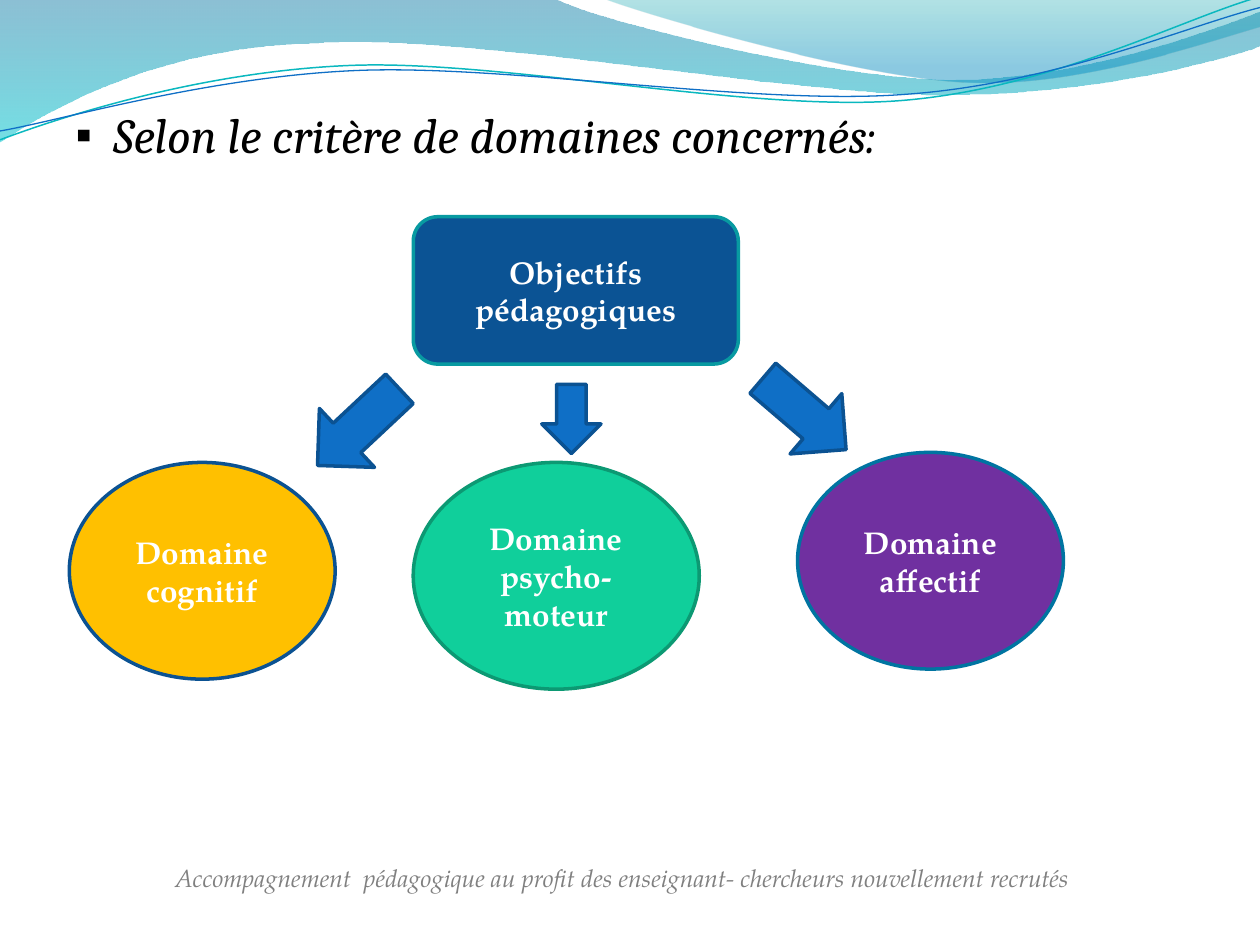
from dataclasses import dataclass
from math import cos, radians, sin
from typing import Optional

from lxml.etree import SubElement
from pptx import Presentation
from pptx.dml.color import RGBColor
from pptx.enum.shapes import MSO_SHAPE
from pptx.enum.text import MSO_ANCHOR, PP_ALIGN
from pptx.oxml.ns import qn
from pptx.util import Inches, Pt

BODY_FONT = "TeX Gyre Pagella"


@dataclass
class GradientStop:
    position: float
    color: str
    opacity: int


@dataclass
class Wave:
    start: tuple
    segments: list
    stops: tuple = ()
    line_color: str = ""
    line_width: float = 0
    rotation: float = 0
    center: tuple = (0, 0)


@dataclass
class Block:
    kind: MSO_SHAPE
    left: float
    top: float
    width: float
    height: float
    fill: str
    line: str
    text: Optional[str] = None
    rotation: float = 0


WAVES = [
    Wave(
        (0, 0),
        [(4.4, -0.01), (4.76, 0.17, 6.64, 0.63, 7.58, 0.63),
         (8.53, 0.63, 9.58, 0.26, 10, 0.09), (10.01, 0.36),
         (9.83, 0.44, 8.7, 0.76, 7.46, 0.75), (6.22, 0.75, 3.82, 0.28, 2.57, 0.34),
         (1.29, 0.36, 0.46, 0.83, -0.01, 1.13), (0, 0)],
        stops=(GradientStop(0, "0074A1", 45), GradientStop(1, "00C6CF", 55)),
    ),
    Wave(
        (4.79, -0.01),
        [(5.09, 0.11, 6.82, 0.62, 7.69, 0.65), (8.56, 0.69, 9.61, 0.32, 10, 0.21),
         (10, 0), (4.79, -0.01)],
        stops=(GradientStop(0, "00A1A9", 30), GradientStop(0.8, "008BBF", 45)),
    ),
    Wave(
        (0, 1.11),
        [(0.48, 0.93, 1.58, 0.57, 2.77, 0.52), (3.95, 0.47, 5.93, 0.89, 7.13, 0.8),
         (8.33, 0.71, 9.38, 0.15, 9.98, -0.02)],
        line_color="0AB8BF", line_width=0.85, rotation=357.3, center=(4.99, 0.57),
    ),
    Wave(
        (0, 1.04),
        [(0.47, 0.96, 1.64, 0.61, 2.83, 0.56), (4.03, 0.51, 5.97, 0.84, 7.17, 0.75),
         (8.36, 0.67, 9.41, 0.21, 10, 0.06)],
        line_color="0F6FC6", line_width=0.75, rotation=357.3, center=(5, 0.59),
    ),
]

BLOCKS = [
    Block(MSO_SHAPE.ROUNDED_RECTANGLE, 3.28, 1.72, 2.58, 1.17, "0B5394", "089AA1", "Objectifs pédagogiques"),
    Block(MSO_SHAPE.OVAL, 6.33, 3.59, 2.11, 1.72, "7030A0", "0074A1", "Domaine affectif"),
    Block(MSO_SHAPE.OVAL, 3.28, 3.67, 2.27, 1.8, "10CF9B", "0C9973", "Domaine psycho- moteur"),
    Block(MSO_SHAPE.OVAL, 0.55, 3.67, 2.11, 1.72, "FFC000", "0B5292", "Domaine cognitif"),
    Block(MSO_SHAPE.DOWN_ARROW, 4.3, 3.05, 0.47, 0.55, "0F6FC6", "0B5292"),
    Block(MSO_SHAPE.RIGHT_ARROW, 2.4, 3.07, 0.89, 0.64, "0F6FC6", "0B5292", rotation=136.9),
    Block(MSO_SHAPE.DOWN_ARROW, 6.07, 2.85, 0.63, 0.87, "0F6FC6", "0B5292", rotation=310.6),
]


def rgb(color: str) -> RGBColor:
    return RGBColor.from_string(color)


def write_text(paragraph, text: str, color: str, **formats) -> None:
    run = paragraph.add_run()
    run.text = text
    run.font.color.rgb = rgb(color)
    for name, value in formats.items():
        setattr(run.font, name, value)


def unrotate(wave: Wave, values: tuple) -> list:
    angle = radians(-wave.rotation)
    center_x, center_y = wave.center
    points = []
    for x, y in zip(values[::2], values[1::2]):
        dx, dy = x - center_x, y - center_y
        points.append((Inches(center_x + dx * cos(angle) - dy * sin(angle)),
                       Inches(center_y + dx * sin(angle) + dy * cos(angle))))
    return points


def curve_lines(shape, segments: list) -> None:
    left, top = shape.left, shape.top
    lines = list(shape._element.iter(qn("a:lnTo")))
    for line, points in zip(lines, segments):
        if len(points) == 1:
            continue
        line.tag = qn("a:cubicBezTo")
        line.remove(line[0])
        for x, y in points:
            SubElement(line, qn("a:pt"), x=str(x - left), y=str(y - top))


def fill_gradient(shape, stops: tuple) -> None:
    shape.fill.gradient()
    shape.fill.gradient_angle = 270
    for target, stop in zip(shape.fill.gradient_stops, stops):
        target.position = stop.position
        target.color.rgb = rgb(stop.color)
    for element, stop in zip(shape._element.spPr.iter(qn("a:srgbClr")), stops):
        SubElement(element, qn("a:alpha"), val=str(stop.opacity * 1000))


def draw_wave(slide, wave: Wave) -> None:
    segments = [unrotate(wave, segment) for segment in wave.segments]
    builder = slide.shapes.build_freeform(*unrotate(wave, wave.start)[0])
    builder.add_line_segments([points[-1] for points in segments], close=bool(wave.stops))
    shape = builder.convert_to_shape()
    curve_lines(shape, segments)
    shape.rotation = wave.rotation
    shape.shadow.inherit = False
    if wave.stops:
        fill_gradient(shape, wave.stops)
        shape.line.fill.background()
    else:
        shape.fill.background()
        shape.line.color.rgb = rgb(wave.line_color)
        shape.line.width = Pt(wave.line_width)


def draw_block(slide, block: Block) -> None:
    box = map(Inches, (block.left, block.top, block.width, block.height))
    shape = slide.shapes.add_shape(block.kind, *box)
    shape.shadow.inherit = False
    shape.rotation = block.rotation
    shape.fill.solid()
    shape.fill.fore_color.rgb = rgb(block.fill)
    shape.line.color.rgb = rgb(block.line)
    shape.line.width = Pt(2)
    if block.text:
        shape.text_frame.word_wrap = True
        shape.text_frame.vertical_anchor = MSO_ANCHOR.MIDDLE
        paragraph = shape.text_frame.paragraphs[0]
        paragraph.alignment = PP_ALIGN.CENTER
        write_text(paragraph, block.text, "FFFFFF", name=BODY_FONT, size=Pt(18), bold=True)


def write_heading(slide, body) -> None:
    slide.shapes._spTree.append(body._element)
    placement = {"left": 0.5, "top": 0.78, "width": 9, "height": 5.92}
    for name, value in placement.items():
        setattr(body, name, Inches(value))
    paragraph = body.text_frame.paragraphs[0]
    properties = paragraph._p.get_or_add_pPr()
    properties.set("marL", str(Inches(0.3)))
    properties.set("indent", str(Inches(-0.3)))
    spacing = SubElement(properties, qn("a:spcBef"))
    SubElement(spacing, qn("a:spcPct"), val="20000")
    bullet_color = SubElement(properties, qn("a:buClr"))
    SubElement(bullet_color, qn("a:srgbClr"), val="000000")
    SubElement(properties, qn("a:buSzPct"), val="95000")
    SubElement(properties, qn("a:buChar"), char="▪")
    write_text(paragraph, "Selon le critère de domaines concernés:", "000000",
               name="Cambria", size=Pt(28), italic=True)


def write_footer(slide) -> None:
    footer = slide.shapes.add_textbox(Inches(0.55), Inches(6.8), Inches(8.83), Inches(0.34))
    footer.text_frame.word_wrap = True
    paragraph = footer.text_frame.paragraphs[0]
    paragraph.alignment = PP_ALIGN.CENTER
    write_text(paragraph, "Accompagnement  pédagogique au profit des enseignant- chercheurs nouvellement recrutés ",
               "808080", name=BODY_FONT, size=Pt(14), italic=True)


def main() -> None:
    presentation = Presentation()
    presentation.slide_width = Inches(10)
    presentation.slide_height = Inches(7.5)
    slide = presentation.slides.add_slide(presentation.slide_layouts[1])
    title, body = slide.placeholders
    title._element.getparent().remove(title._element)
    for wave in WAVES:
        draw_wave(slide, wave)
    write_heading(slide, body)
    write_footer(slide)
    for block in BLOCKS:
        draw_block(slide, block)
    presentation.save("out.pptx")


if __name__ == "__main__":
    main()
